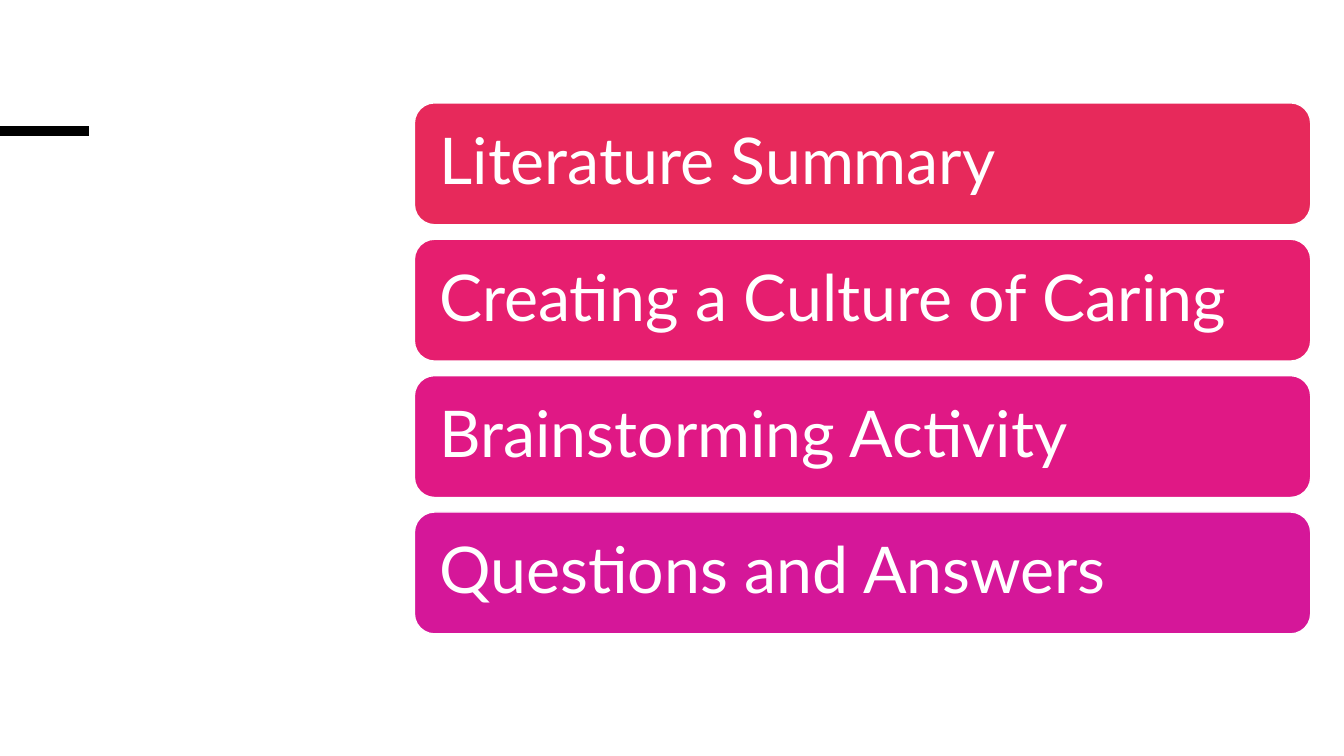
from pptx import Presentation
from pptx import util as u
from pptx.dml.color import RGBColor
from pptx.enum import shapes, text
from pptx.oxml.ns import qn
from lxml import etree

WIDE, HIGH = 13.33, 7.5
LEFT, TOP = 4.11, 1.02      # corner of the agenda stack
BAR_W, BAR_H = 8.89, 1.21
STEP = 1.353                # from one bar to the next
INSET = 0.19

AGENDA = [
    ("Literature Summary", "E7295B"),
    ("Creating a Culture of Caring", "E61E6F"),
    ("Brainstorming Activity", "E01885"),
    ("Questions and Answers", "D51799"),
]


def color(code):
    return RGBColor.from_string(code)


def add_rule(slide, y, end):
    """Thick black rule from the left edge."""
    rule = slide.shapes.add_connector(
        shapes.MSO_CONNECTOR.STRAIGHT, 0, u.Inches(y), u.Inches(end), u.Inches(y))
    rule.line.color.rgb = color("000000")
    rule.line.width = u.Pt(6.75)
    etree.SubElement(rule._element.spPr, qn("a:effectLst"))


def add_bar(slide, row, label, fill):
    """Rounded agenda bar on the given row."""
    bar = slide.shapes.add_shape(
        shapes.MSO_SHAPE.ROUNDED_RECTANGLE, u.Inches(LEFT),
        u.Inches(TOP + row * STEP), u.Inches(BAR_W), u.Inches(BAR_H))
    bar.shadow.inherit = False
    bar.fill.solid()
    bar.fill.fore_color.rgb = color(fill)
    bar.line.color.rgb = color("FFFFFF")
    bar.line.width = u.Pt(1)

    # Label
    frame = bar.text_frame
    frame.text = label
    frame.word_wrap = True
    frame.vertical_anchor = text.MSO_ANCHOR.MIDDLE
    frame.margin_left = frame.margin_right = u.Inches(INSET)
    frame.margin_top = frame.margin_bottom = u.Inches(INSET)
    para = frame.paragraphs[0]
    para.alignment = text.PP_ALIGN.LEFT
    para.line_spacing = 0.9
    font = para.runs[0].font
    font.name = "Lato"
    font.size = u.Pt(46)
    font.color.rgb = color("FFFFFF")


def main():
    deck = Presentation()
    deck.slide_width, deck.slide_height = u.Inches(WIDE), u.Inches(HIGH)
    slide = deck.slides.add_slide(deck.slide_layouts[6])
    add_rule(slide, 1.3, 0.88)
    for row, (label, fill) in enumerate(AGENDA):
        add_bar(slide, row, label, fill)
    deck.save("out.pptx")


if __name__ == "__main__":
    main()
